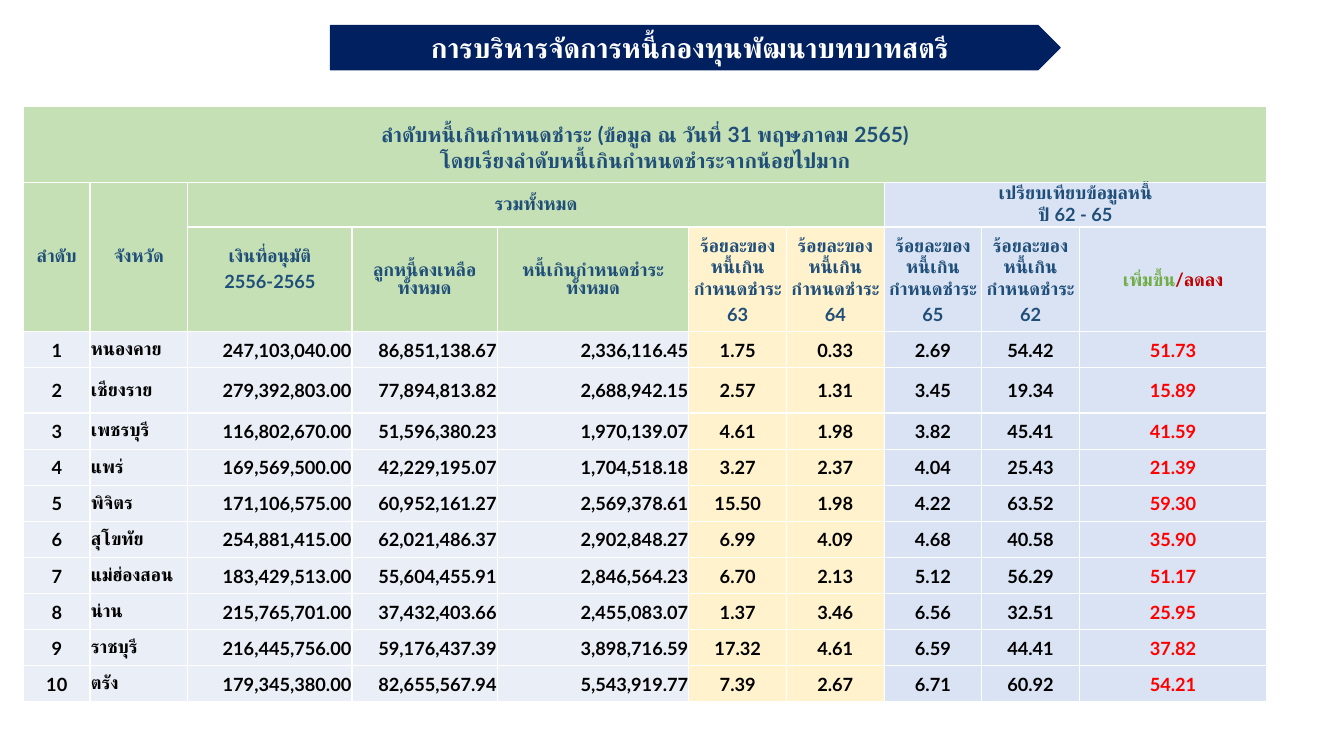
from dataclasses import dataclass

from lxml import etree
from pptx import Presentation
from pptx import util as u
from pptx.dml.color import RGBColor
from pptx.enum import shapes, text
from pptx.oxml import ns


@dataclass(frozen=True)
class Theme:
    font: str = "Lato"
    banner_size: int = 20
    title_size: int = 15
    body_size: int = 13
    navy: str = "002060"
    white: str = "FFFFFF"
    heading: str = "1F4E79"
    black: str = "000000"
    red: str = "FF0000"
    dark_red: str = "C00000"
    bright_green: str = "70AD47"
    green: str = "C5E0B4"
    yellow: str = "FFF2CC"
    blue: str = "DAE3F3"
    pale: str = "EAEFF7"


theme = Theme()
LEFT, CENTER, RIGHT = text.PP_ALIGN.LEFT, text.PP_ALIGN.CENTER, text.PP_ALIGN.RIGHT


def format_text(text_frame, size, color, alignment=CENTER, spacing=None):
    for paragraph in text_frame.paragraphs:
        paragraph.alignment = alignment
        paragraph.line_spacing = spacing
        for run in paragraph.runs:
            run.font.name = theme.font
            run.font.size = u.Pt(size)
            run.font.bold = True
            run.font.color.rgb = RGBColor.from_string(color)


def style_cell(cell, fill):
    cell.fill.solid()
    cell.fill.fore_color.rgb = RGBColor.from_string(fill)
    cell.vertical_anchor = text.MSO_ANCHOR.MIDDLE
    cell.margin_left = cell.margin_right = cell.margin_top = u.Cm(0.02)
    cell.margin_bottom = u.Cm(0)
    properties = cell._tc.get_or_add_tcPr()
    for position, side in enumerate(("lnL", "lnR", "lnT", "lnB")):
        border = etree.Element(ns.qn(f"a:{side}"), w=str(u.Pt(1)))
        border_fill = etree.SubElement(border, ns.qn("a:solidFill"))
        etree.SubElement(border_fill, ns.qn("a:srgbClr"), val=theme.white)
        properties.insert(position, border)


presentation = Presentation()
presentation.slide_width = u.Cm(33.87)
presentation.slide_height = u.Cm(19.05)
slide = presentation.slides.add_slide(presentation.slide_layouts[6])

banner = slide.shapes.add_shape(
    shapes.MSO_SHAPE.PENTAGON, u.Cm(8.33), u.Cm(0.64), u.Cm(18.39), u.Cm(1.12)
)
banner.shadow.inherit = False
banner.fill.solid()
banner.fill.fore_color.rgb = RGBColor.from_string(theme.navy)
banner.line.color.rgb = RGBColor.from_string(theme.navy)
banner.line.width = u.Pt(0.75)
banner.text_frame.text = "การบริหารจัดการหนี้กองทุนพัฒนาบทบาทสตรี"
banner.text_frame.vertical_anchor = text.MSO_ANCHOR.MIDDLE
format_text(banner.text_frame, theme.banner_size, theme.white)

column_widths = [1.68, 2.46, 4.14, 3.66, 4.83] + [2.46] * 4 + [4.72]
row_heights = [1.93, 1.12, 2.64, 0.91, 1.14] + [0.91] * 8
column_fills = [theme.pale] * 5 + [theme.yellow] * 2 + [theme.blue] * 3
column_alignments = [CENTER, LEFT] + [RIGHT] * 3 + [CENTER] * 5
column_colors = [theme.black] * 9 + [theme.red]

headers = [
    (0, 0, 0, 9, "ลำดับหนี้เกินกำหนดชำระ (ข้อมูล ณ วันที่ 31 พฤษภาคม 2565)\n"
                 "โดยเรียงลำดับหนี้เกินกำหนดชำระจากน้อยไปมาก", theme.green, 1.2),
    (1, 0, 2, 0, "ลำดับ", theme.green, None),
    (1, 1, 2, 1, "จังหวัด", theme.green, None),
    (1, 2, 1, 6, "รวมทั้งหมด", theme.green, None),
    (1, 7, 1, 9, "เปรียบเทียบข้อมูลหนี้\nปี 62 - 65", theme.blue, None),
    (2, 2, 2, 2, "เงินที่อนุมัติ\v2556-2565", theme.green, 1.2),
    (2, 3, 2, 3, "ลูกหนี้คงเหลือทั้งหมด", theme.green, None),
    (2, 4, 2, 4, "หนี้เกินกำหนดชำระทั้งหมด", theme.green, None),
    (2, 5, 2, 5, "ร้อยละของ\vหนี้เกินกำหนดชำระ 63", theme.yellow, 1.2),
    (2, 6, 2, 6, "ร้อยละของ\vหนี้เกินกำหนดชำระ 64", theme.yellow, 1.2),
    (2, 7, 2, 7, "ร้อยละของ\vหนี้เกินกำหนดชำระ 65", theme.blue, 1.2),
    (2, 8, 2, 8, "ร้อยละของหนี้เกินกำหนดชำระ 62", theme.blue, 1.2),
    (2, 9, 2, 9, "เพิ่มขึ้น", theme.blue, None),
]
provinces = [
    ("หนองคาย", "247,103,040.00", "86,851,138.67", "2,336,116.45", "1.75", "0.33", "2.69", "54.42", "51.73"),
    ("เชียงราย", "279,392,803.00", "77,894,813.82", "2,688,942.15", "2.57", "1.31", "3.45", "19.34", "15.89"),
    ("เพชรบุรี", "116,802,670.00", "51,596,380.23", "1,970,139.07", "4.61", "1.98", "3.82", "45.41", "41.59"),
    ("แพร่", "169,569,500.00", "42,229,195.07", "1,704,518.18", "3.27", "2.37", "4.04", "25.43", "21.39"),
    ("พิจิตร", "171,106,575.00", "60,952,161.27", "2,569,378.61", "15.50", "1.98", "4.22", "63.52", "59.30"),
    ("สุโขทัย", "254,881,415.00", "62,021,486.37", "2,902,848.27", "6.99", "4.09", "4.68", "40.58", "35.90"),
    ("แม่ฮ่องสอน", "183,429,513.00", "55,604,455.91", "2,846,564.23", "6.70", "2.13", "5.12", "56.29", "51.17"),
    ("น่าน", "215,765,701.00", "37,432,403.66", "2,455,083.07", "1.37", "3.46", "6.56", "32.51", "25.95"),
    ("ราชบุรี", "216,445,756.00", "59,176,437.39", "3,898,716.59", "17.32", "4.61", "6.59", "44.41", "37.82"),
    ("ตรัง", "179,345,380.00", "82,655,567.94", "5,543,919.77", "7.39", "2.67", "6.71", "60.92", "54.21"),
]

table = slide.shapes.add_table(
    len(row_heights), len(column_widths), u.Cm(0.59), u.Cm(2.67),
    u.Cm(sum(column_widths)), u.Cm(sum(row_heights)),
).table
table.first_row = False
table.horz_banding = False
for column, width in zip(table.columns, column_widths):
    column.width = u.Cm(width)
for row, height in zip(table.rows, row_heights):
    row.height = u.Cm(height)

for top, left, bottom, right, label, fill, spacing in headers:
    for row_index in range(top, bottom + 1):
        for column_index in range(left, right + 1):
            style_cell(table.cell(row_index, column_index), fill)
    cell = table.cell(top, left)
    if (top, left) != (bottom, right):
        cell.merge(table.cell(bottom, right))
    cell.text_frame.text = label
    size = theme.title_size if top == 0 else theme.body_size
    format_text(cell.text_frame, size, theme.heading, CENTER, spacing)

table.cell(2, 2).margin_bottom = u.Cm(0.56)
change_frame = table.cell(2, 9).text_frame
change_frame.paragraphs[0].add_run().text = "/ลดลง"
format_text(change_frame, theme.body_size, theme.dark_red)
change_frame.paragraphs[0].runs[0].font.color.rgb = RGBColor.from_string(theme.bright_green)

for rank, province in enumerate(provinces, start=1):
    for column_index, value in enumerate((str(rank), *province)):
        cell = table.cell(rank + 2, column_index)
        style_cell(cell, column_fills[column_index])
        cell.text_frame.text = value
        format_text(cell.text_frame, theme.body_size, column_colors[column_index],
                    column_alignments[column_index])

presentation.save("out.pptx")
